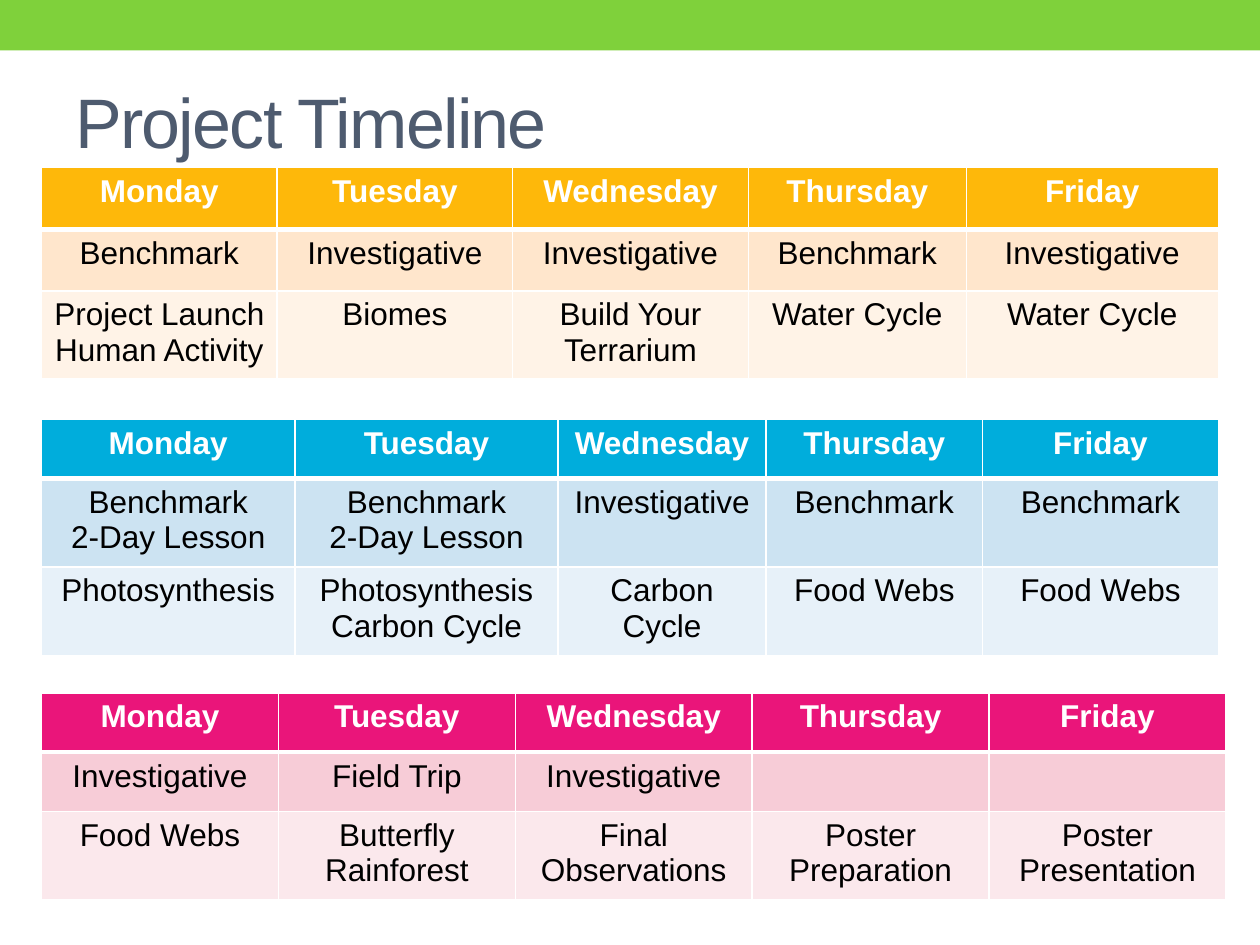
from lxml import etree
from pptx import Presentation
from pptx.dml.color import RGBColor
from pptx.enum.shapes import MSO_SHAPE
from pptx.enum.text import MSO_ANCHOR, PP_ALIGN
from pptx.oxml.ns import qn
from pptx.util import Inches, Pt

RECTANGLE = MSO_SHAPE.RECTANGLE
MIDDLE = MSO_ANCHOR.MIDDLE
LEFT, CENTER = PP_ALIGN.LEFT, PP_ALIGN.CENTER

DAYS = ["Monday", "Tuesday", "Wednesday", "Thursday", "Friday"]


def color(value):
    return RGBColor.from_string(value)


def write(frame, text, size=18, ink="000000", bold=False, align=CENTER,
          font="Arial", tracking=None):
    """Fill a text frame, one paragraph for each line of the text."""
    for index, line in enumerate(text.split("\n")):
        paragraph = frame.paragraphs[0] if index == 0 else frame.add_paragraph()
        paragraph.alignment = align
        run = paragraph.add_run()
        run.text = line
        run.font.name, run.font.size, run.font.bold = font, Pt(size), bold
        run.font.color.rgb = color(ink)
        if tracking is not None:
            run.font._element.set("spc", str(int(tracking * 100)))


class Timeline:
    line = "FFFFFF"
    thin, thick = 1, 3

    def __init__(self, slide):
        self.slide = slide

    def band(self, left, top, width, height, fill):
        bar = self.slide.shapes.add_shape(
            RECTANGLE, Inches(left), Inches(top), Inches(width), Inches(height))
        bar.shadow.inherit = False
        bar.fill.solid()
        bar.fill.fore_color.rgb = color(fill)
        bar.line.fill.background()

    def title(self, left, top, width, height, text):
        heading = self.slide.shapes.add_textbox(
            Inches(left), Inches(top), Inches(width), Inches(height))
        frame = heading.text_frame
        frame.word_wrap = True
        frame.vertical_anchor = MIDDLE
        write(frame, text, size=40, ink="4E5B6F", align=LEFT, tracking=-1)

    def borders(self, cell, top, bottom):
        properties = cell._tc.get_or_add_tcPr()
        sides = {"a:lnL": self.thin, "a:lnR": self.thin,
                 "a:lnT": top, "a:lnB": bottom}
        for index, (side, width) in enumerate(sides.items()):
            edge = etree.Element(qn(side), w=str(Pt(width)))
            solid = etree.SubElement(edge, qn("a:solidFill"))
            etree.SubElement(solid, qn("a:srgbClr"), val=self.line)
            properties.insert(index, edge)

    def week(self, left, top, columns, row_height, fills, lessons):
        rows = [DAYS] + lessons
        table = self.slide.shapes.add_table(
            len(rows), len(columns), Inches(left), Inches(top),
            Inches(sum(columns)), Inches(row_height * len(rows))).table
        for column, width in zip(table.columns, columns):
            column.width = Inches(width)
        for r, (texts, fill) in enumerate(zip(rows, fills)):
            table.rows[r].height = Inches(row_height)
            header = r == 0
            for c, text in enumerate(texts):
                cell = table.cell(r, c)
                cell.fill.solid()
                cell.fill.fore_color.rgb = color(fill)
                self.borders(cell, top=self.thick if r == 1 else self.thin,
                             bottom=self.thick if header else self.thin)
                if text:
                    write(cell.text_frame, text, bold=header,
                          ink="FFFFFF" if header else "000000")


def main():
    deck = Presentation()
    deck.slide_width, deck.slide_height = Inches(10), Inches(7.5)
    timeline = Timeline(deck.slides.add_slide(deck.slide_layouts[6]))

    # Top band and title
    timeline.band(0, 0, 10, 0.4, "7FD13B")
    timeline.title(0.5, 0.42, 9, 1.08, "Project Timeline")

    # First week
    timeline.week(
        0.33, 1.33, [1.87, 1.87, 1.87, 1.73, 2], 0.49,
        ["FEB80A", "FFE6CC", "FFF3E7"],
        [["Benchmark", "Investigative", "Investigative", "Benchmark",
          "Investigative"],
         ["Project Launch\nHuman Activity", "Biomes", "Build Your Terrarium",
          "Water Cycle", "Water Cycle"]])

    # Second week
    timeline.week(
        0.33, 3.33, [2.01, 2.09, 1.65, 1.72, 1.87], 0.47,
        ["00ADDC", "CCE3F2", "E7F1F9"],
        [["Benchmark\n2-Day Lesson", "Benchmark\n2-Day Lesson",
          "Investigative", "Benchmark", "Benchmark"],
         ["Photosynthesis", "Photosynthesis\nCarbon Cycle", "Carbon Cycle",
          "Food Webs", "Food Webs"]])

    # Third week
    timeline.week(
        0.33, 5.5, [1.88] * len(DAYS), 0.47,
        ["EA157A", "F7CCD7", "FBE8EC"],
        [["Investigative", "Field Trip", "Investigative", "", ""],
         ["Food Webs", "Butterfly Rainforest", "Final Observations",
          "Poster Preparation", "Poster Presentation"]])

    deck.save("out.pptx")


if __name__ == "__main__":
    main()
